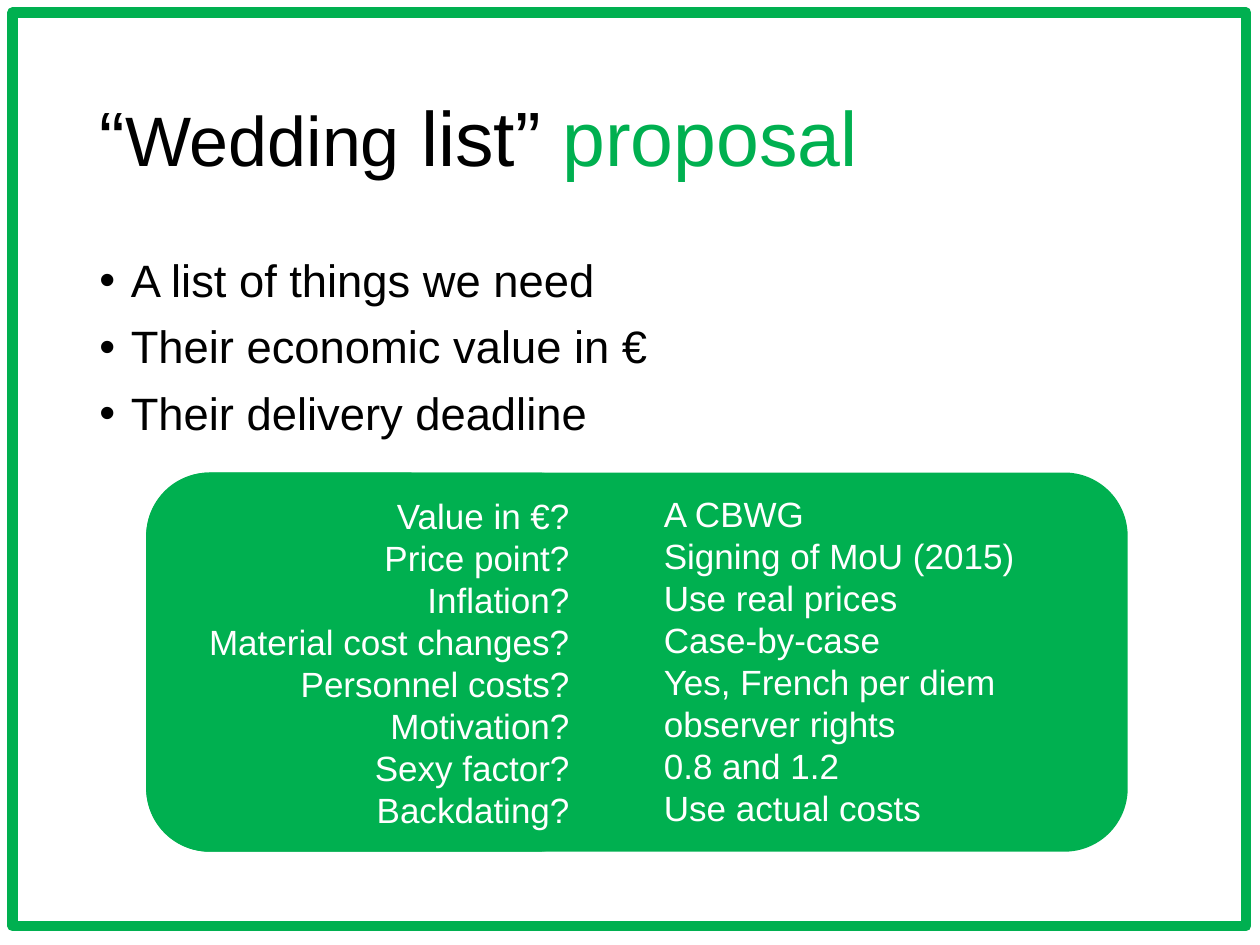
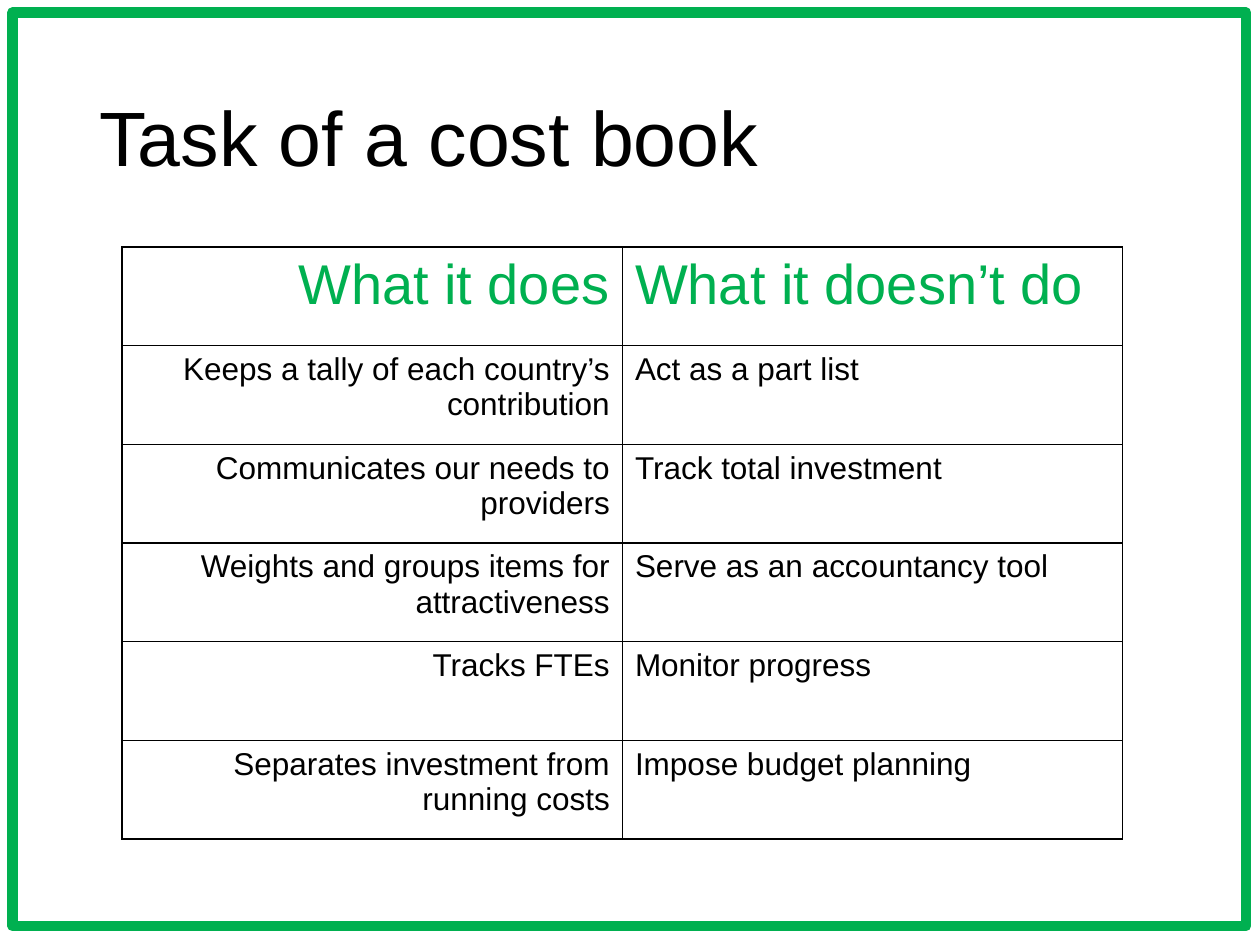
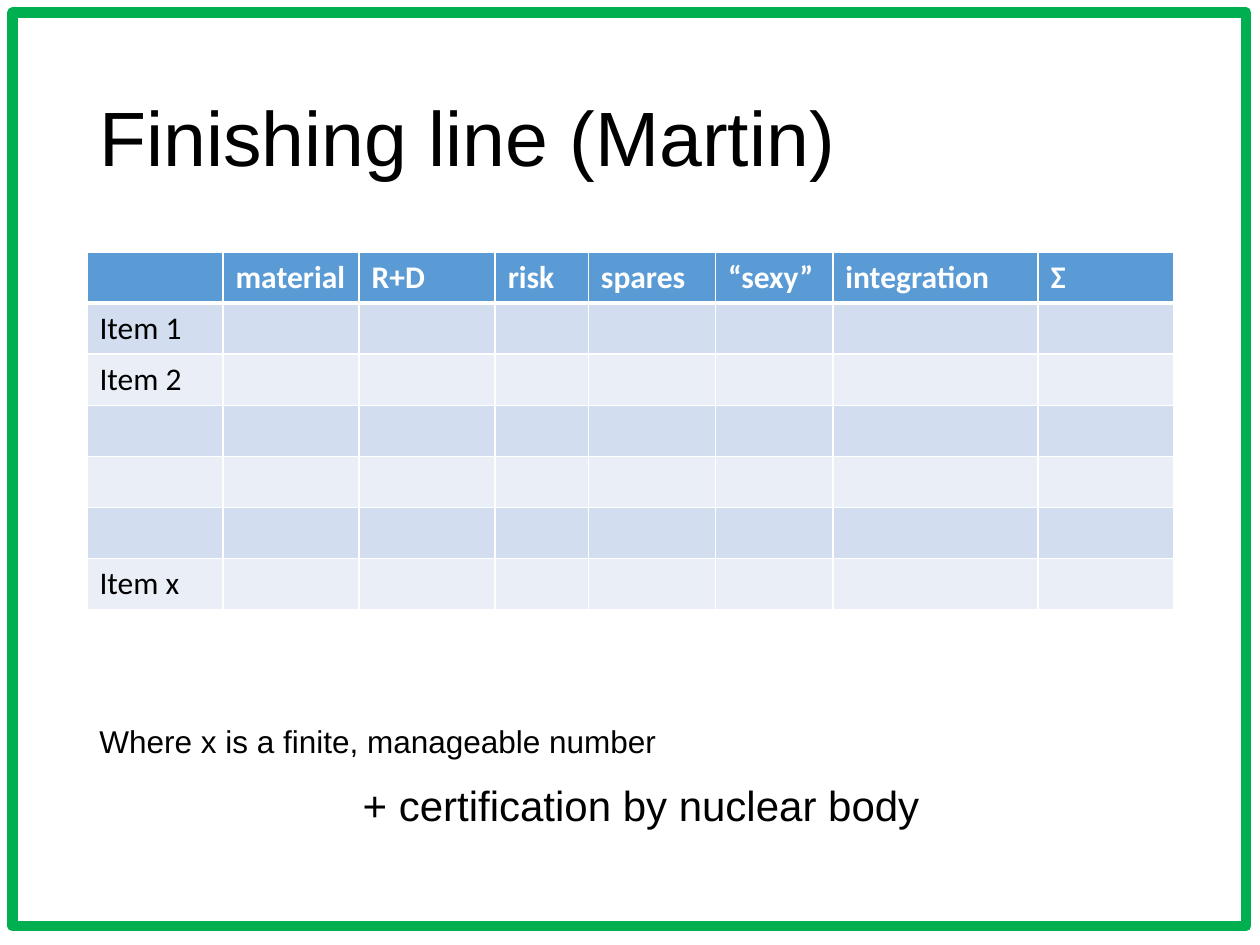
import pptx
import pptx.util
import pptx.dml.color
import pptx.enum.shapes
import pptx.enum.text
import pptx.oxml.ns
import lxml.etree

Inches, Pt = pptx.util.Inches, pptx.util.Pt
SHAPE = pptx.enum.shapes.MSO_SHAPE
ALIGN = pptx.enum.text.PP_ALIGN
MIDDLE = pptx.enum.text.MSO_ANCHOR.MIDDLE
qn = pptx.oxml.ns.qn

GREEN, BLACK, WHITE = "00B050", "000000", "FFFFFF"
BLUE, BANDS = "5B9BD5", ("D2DEEF", "EAEFF7")

WEDDING = [("“", 44, BLACK), ("Wedding", 40, BLACK), (" list” ", 44, BLACK),
           ("proposal", 44, GREEN)]
NEEDS = ["A list of things we need", "Their economic value in €",
         "Their delivery deadline"]
ISSUES = [
    ("Value in €?", "A CBWG"),
    ("Price point?", "Signing of MoU (2015)"),
    ("Inflation?", "Use real prices"),
    ("Material cost changes?", "Case-by-case"),
    ("Personnel costs?", "Yes, French per diem"),
    ("Motivation?", "observer rights"),
    ("Sexy factor?", "0.8 and 1.2"),
    ("Backdating?", "Use actual costs"),
]
TASKS = [
    ("What it does", "What it doesn’t do"),
    ("Keeps a tally of each country’s contribution", "Act as a part list"),
    ("Communicates our needs to providers", "Track total investment"),
    ("Weights and groups items for attractiveness",
     "Serve as an accountancy tool"),
    ("Tracks FTEs", "Monitor progress"),
    ("Separates investment from running costs", "Impose budget planning"),
]
HEADS = ["", "material", "R+D", "risk", "spares", "“sexy”", "integration", "Σ"]
ITEMS = ["Item 1", "Item 2", "", "", "", "Item x"]
WIDTHS = [1.08, 1.08, 1.08, 0.74, 1.01, 0.93, 1.63, 1.08]


def color(code):
    return pptx.dml.color.RGBColor.from_string(code)


def style(run, size, code=BLACK, face="Arial", bold=False):
    run.font.size, run.font.name, run.font.bold = Pt(size), face, bold
    run.font.color.rgb = color(code)


def write(frame, lines, size, code=BLACK, align=ALIGN.LEFT, **look):
    frame.text = "\n".join(lines)
    for para in frame.paragraphs:
        para.alignment = align
        for run in para.runs:
            style(run, size, code, **look)


def add_text(slide, at, lines, size, code=BLACK, wrap=True):
    frame = slide.shapes.add_textbox(*map(Inches, at)).text_frame
    frame.word_wrap = wrap
    write(frame, lines, size, code)
    return frame


def add_shape(slide, kind, at, fill=None, line=None):
    shape = slide.shapes.add_shape(kind, *map(Inches, at))
    shape.shadow.inherit = False
    if fill:
        shape.fill.solid()
        shape.fill.fore_color.rgb = color(fill)
    else:
        shape.fill.background()
    if line:
        shape.line.color.rgb = color(line)
        shape.line.width = Pt(6)
    else:
        shape.line.fill.background()
    return shape


def add_slide(deck, title):
    """Add a slide with the green frame and a title of (text, size, colour)."""
    slide = deck.slides.add_slide(deck.slide_layouts[6])
    add_shape(slide, SHAPE.RECTANGLE, (0.1, 0.1, 9.79, 7.25), line=GREEN)
    frame = add_text(slide, (0.69, 0.4, 8.62, 1.45), [""], 44)
    frame.vertical_anchor = MIDDLE
    para = frame.paragraphs[0]
    para.line_spacing = 0.9
    for text, size, code in title:
        run = para.add_run()
        run.text = text
        style(run, size, code)
    return slide


def bullet(para):
    para.line_spacing, para.space_before = 0.9, Pt(10)
    props = para._p.get_or_add_pPr()
    props.set("marL", str(Inches(0.25)))
    props.set("indent", str(-Inches(0.25)))
    lxml.etree.SubElement(props, qn("a:buFont")).set("typeface", "Arial")
    lxml.etree.SubElement(props, qn("a:buChar")).set("char", "•")


def border(cell, code, base=1):
    """Line all sides of a cell; base is the width of the bottom line."""
    props = cell._tc.get_or_add_tcPr()
    for spot, side in enumerate("LRTB"):
        line = lxml.etree.Element(qn("a:ln" + side))
        line.set("w", str(Pt(base if side == "B" else 1)))
        fill = lxml.etree.SubElement(line, qn("a:solidFill"))
        lxml.etree.SubElement(fill, qn("a:srgbClr")).set("val", code)
        props.insert(spot, line)


def add_table(slide, left, top, widths, height, rows, paint):
    """Add a table; paint(cell, text, row, col) styles each cell."""
    table = slide.shapes.add_table(
        len(rows), len(widths), Inches(left), Inches(top),
        Inches(sum(widths)), Inches(height * len(rows))).table
    table.first_row = table.horz_banding = False
    for col, width in zip(table.columns, widths):
        col.width = Inches(width)
    for r, row in enumerate(rows):
        table.rows[r].height = Inches(height)
        for c, text in enumerate(row):
            paint(table.cell(r, c), text, r, c)


def paint_task(cell, text, row, col):
    size, code = (18, BLACK) if row else (32, GREEN)
    write(cell.text_frame, [text], size, code,
          ALIGN.LEFT if col else ALIGN.RIGHT)
    cell.fill.background()
    border(cell, BLACK)


def paint_item(cell, text, row, col):
    head = row == 0
    write(cell.text_frame, [text], 18, WHITE if head else BLACK,
          face="Calibri", bold=head)
    cell.fill.solid()
    cell.fill.fore_color.rgb = color(BLUE if head else BANDS[(row - 1) % 2])
    border(cell, WHITE, 3 if head else 1)


def wedding(deck):
    slide = add_slide(deck, WEDDING)
    add_shape(slide, SHAPE.ROUNDED_RECTANGLE, (1.16, 3.75, 7.79, 3.01), GREEN)
    needs = add_text(slide, (0.69, 2, 4.84, 1.76), NEEDS, 25.9)
    for para in needs.paragraphs:
        bullet(para)
    asks, answers = zip(*ISSUES)
    call = add_shape(slide, SHAPE.ROUNDED_RECTANGULAR_CALLOUT,
                     (1.16, 3.75, 3.61, 3.01), GREEN)
    for spot, value in enumerate((0.47, 0.28, 0.17)):
        call.adjustments[spot] = value
    call.text_frame.vertical_anchor = MIDDLE
    write(call.text_frame, asks, 20, WHITE, ALIGN.RIGHT)
    add_text(slide, (5.17, 3.86, 3.01, 3.13), answers, 20, WHITE, wrap=False)


def tasks(deck):
    slide = add_slide(deck, [("Task of a cost book", 44, BLACK)])
    add_table(slide, 0.97, 1.96, [3.97, 3.97], 4.7 / len(TASKS), TASKS,
              paint_task)


def finish(deck):
    slide = add_slide(deck, [("Finishing line (Martin)", 44, BLACK)])
    blanks = [""] * (len(HEADS) - 1)
    rows = [HEADS] + [[item] + blanks for item in ITEMS]
    add_table(slide, 0.69, 2, WIDTHS, 2.84 / len(rows), rows, paint_item)
    add_text(slide, (0.69, 5.68, 6.09, 0.4),
             ["Where x is a finite, manageable number"], 18)
    add_text(slide, (2.78, 6.14, 5.28, 0.5),
             ["+ certification by nuclear body"], 24)


def main():
    deck = pptx.Presentation()
    deck.slide_width, deck.slide_height = Inches(10), Inches(7.5)
    for build in (wedding, tasks, finish):
        build(deck)
    deck.save("out.pptx")


if __name__ == "__main__":
    main()
